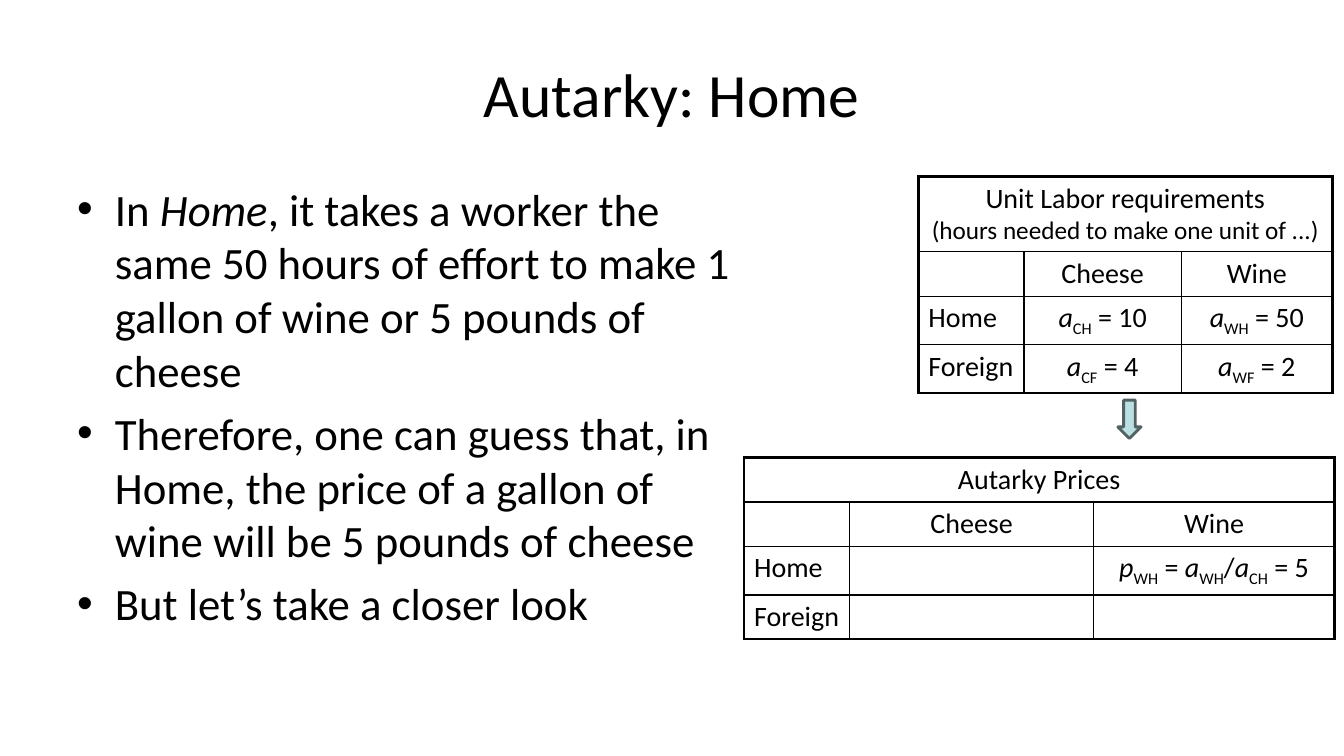
from lxml import etree
from pptx import Presentation
from pptx import util as u
from pptx.dml.color import RGBColor
from pptx.enum import shapes, text
from pptx.oxml import ns

Pt = u.Pt
BLACK = RGBColor(0, 0, 0)
AQUA = RGBColor(0xBB, 0xE0, 0xE3)
SLATE = RGBColor(0x52, 0x62, 0x63)
FONT = "Calibri"
MID = text.PP_ALIGN.CENTER
LEFT = text.PP_ALIGN.LEFT

ITAL = {"italic": True}
SUB = {"sub": True}
SMALL = {"size": Pt(18)}

TITLE = [("Autarky: Home", {})]
POINTS = [
    [("In ", {}), ("Home", ITAL),
     (", it takes a worker the same 50 hours of effort to make 1 gallon "
      "of wine or 5 pounds of cheese", {})],
    [("Therefore, one can guess that, in Home, the price of a gallon of "
      "wine will be 5 pounds of cheese", {})],
    [("But let’s take a closer look", {})],
]
HEADS = [[], [("Cheese", {})], [("Wine", {})]]
HOME = [("Home", {})]
ABROAD = [("Foreign", {})]
LABOR = {
    "at": (655.9, 126), "cols": (75.6, 112.3, 108), "rows": (53.6, 32, 34.6, 34.6),
    "cells": [
        [[("Unit Labor requirements\v", {}),
          ("(hours needed to make one unit of ...)", SMALL)]],
        HEADS,
        [HOME, [("a", ITAL), ("CH", SUB), (" = 10", {})],
         [("a", ITAL), ("WH", SUB), (" = 50", {})]],
        [ABROAD, [("a", ITAL), ("CF", SUB), (" = 4", {})],
         [("a", ITAL), ("WF", SUB), (" = 2", {})]],
    ],
}
PRICES = {
    "at": (531.4, 327), "cols": (75.6, 174.2, 172.1), "rows": (31.6, 31.6, 34.8, 31.6),
    "cells": [
        [[("Autarky Prices", {})]],
        HEADS,
        [HOME, [], [("p", ITAL), ("WH", SUB), (" = ", {}), ("a", ITAL), ("WH", SUB),
                    ("/", {}), ("a", ITAL), ("CH", SUB), (" = 5", {})]],
        [ABROAD, [], []],
    ],
}


def write(para, runs, size, align):
    para.alignment = align
    for words, extra in runs:
        look = {"name": FONT, "size": Pt(size), "italic": False, **extra}
        sub = look.pop("sub", False)
        run = para.add_run()
        run.text = words.rstrip("\v")
        for key, val in look.items():
            setattr(run.font, key, val)
        run.font.color.rgb = BLACK
        if sub:
            run.font._element.set("baseline", "-25000")
        if words.endswith("\v"):
            para.add_line_break()


def frame(slide, box, anchor):
    body = slide.shapes.add_textbox(*map(Pt, box)).text_frame
    for key, val in {"word_wrap": True, "vertical_anchor": anchor}.items():
        setattr(body, key, val)
    return body


def bullet(para):
    props = para._p.get_or_add_pPr()
    for key, val in {"marL": Pt(27), "indent": -Pt(27)}.items():
        props.set(key, str(int(val)))
    etree.SubElement(props, ns.qn("a:buFont")).set("typeface", "Arial")
    etree.SubElement(props, ns.qn("a:buChar")).set("char", "•")


def border(cell, outer):
    props = cell._tc.get_or_add_tcPr()
    for side, edge in outer.items():
        line = etree.SubElement(props, ns.qn("a:ln" + side))
        line.set("w", str(int(Pt(2.25 if edge else 1))))
        fill = etree.SubElement(line, ns.qn("a:solidFill"))
        etree.SubElement(fill, ns.qn("a:srgbClr")).set("val", str(BLACK))


def grid(slide, data):
    cols, rows = data["cols"], data["rows"]
    size = (sum(cols), sum(rows))
    table = slide.shapes.add_table(
        len(rows), len(cols), *map(Pt, data["at"] + size)).table
    table.first_row = table.horz_banding = False
    for col, wide in zip(table.columns, cols):
        col.width = Pt(wide)
    for row, high in zip(table.rows, rows):
        row.height = Pt(high)
    table.cell(0, 0).merge(table.cell(0, len(cols) - 1))
    for r in range(len(rows)):
        for c in range(len(cols)):
            cell = table.cell(r, c)
            last = c == len(cols) - 1
            border(cell, {"L": c == 0, "R": last or r == 0,
                          "T": r == 0, "B": r == len(rows) - 1})
            cell.fill.background()
            if c < len(data["cells"][r]):
                align = LEFT if c == 0 and r > 0 else MID
                write(cell.text_frame.paragraphs[0], data["cells"][r][c], 20, align)


def main():
    deck = Presentation()
    deck.slide_width, deck.slide_height = Pt(960), Pt(540)
    slide = deck.slides.add_slide(deck.slide_layouts[6])

    head = frame(slide, (48, 21.6, 864, 90), text.MSO_ANCHOR.MIDDLE)
    write(head.paragraphs[0], TITLE, 44, MID)

    body = frame(slide, (48, 126, 484, 356.4), text.MSO_ANCHOR.TOP)
    for i, runs in enumerate(POINTS):
        para = body.add_paragraph() if i else body.paragraphs[0]
        para.space_before = Pt(6.4)
        bullet(para)
        write(para, runs, 32, LEFT)

    grid(slide, LABOR)
    arrow = slide.shapes.add_shape(
        shapes.MSO_SHAPE.DOWN_ARROW, *map(Pt, (798.5, 285.8, 16.6, 27.4)))
    arrow.shadow.inherit = False
    arrow.fill.solid()
    arrow.fill.fore_color.rgb = AQUA
    arrow.line.color.rgb = SLATE
    arrow.line.width = Pt(2)
    grid(slide, PRICES)

    deck.save("out.pptx")


if __name__ == "__main__":
    main()
